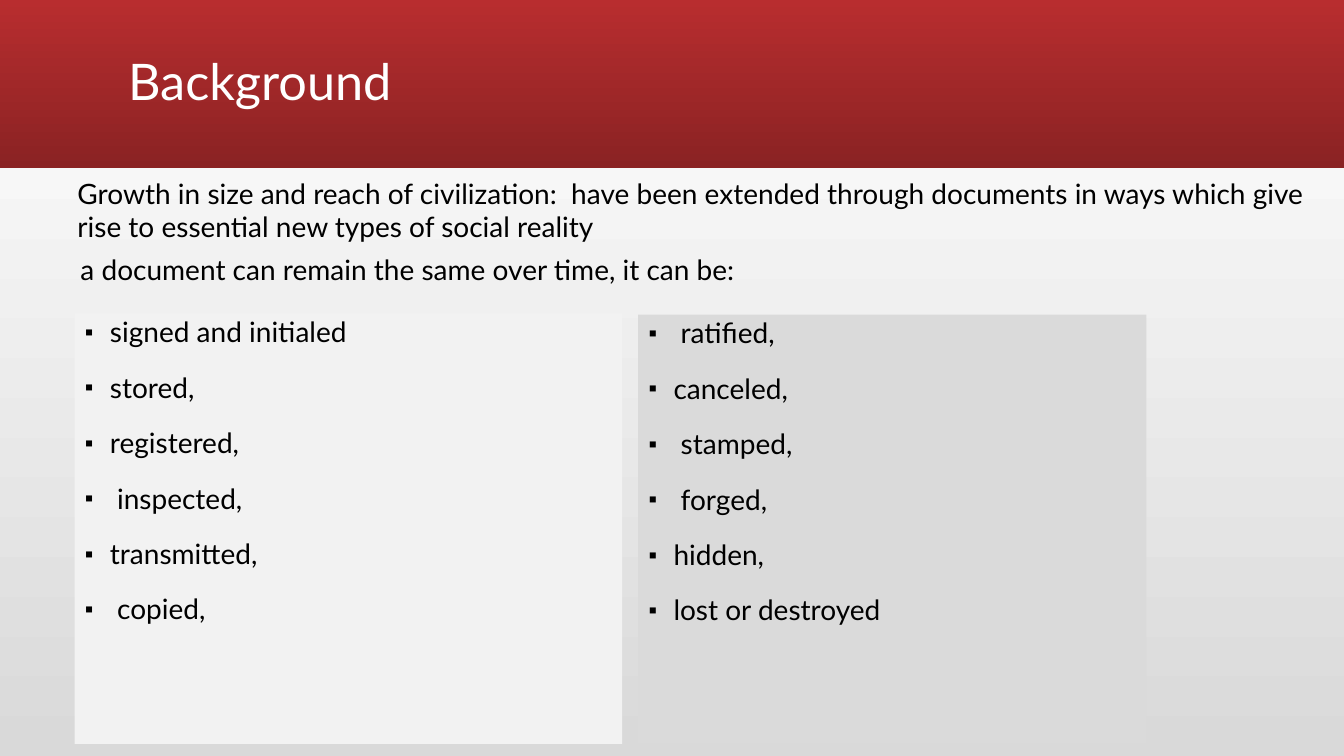
"""Builds the Background slide about what documents can undergo."""
import dataclasses

import lxml.etree
import pptx
import pptx.dml.color
import pptx.enum.shapes
import pptx.enum.text
import pptx.oxml.ns
import pptx.util

Inches = pptx.util.Inches
Pt = pptx.util.Pt


@dataclasses.dataclass(frozen=True)
class Theme:
    """Colours, font and type sizes of the slide."""
    font: str = "Lato"
    title_size: int = 36
    text_size: int = 20
    title: str = "FFFFFF"
    text: str = "000000"
    page: tuple = ("D9D9D9", "FFFFFF")
    band: tuple = ("B82D2F", "8A2223")
    left_panel: str = "F2F2F2"
    right_panel: str = "DADADA"


THEME = Theme()

INTRO = ("Growth in size and reach of civilization:  have been extended through "
         "documents in ways which give rise to essential new types of social reality")
LEAD = "a document can remain the same over time, it can be:"
LEFT_ITEMS = ["signed and initialed", "stored,", "registered,", " inspected,",
              "transmitted,", " copied,"]
RIGHT_ITEMS = [" ratified,", "canceled,", " stamped,", " forged,", "hidden,",
               "lost or destroyed"]


def color(value):
    """Turn a hex string into a colour."""
    return pptx.dml.color.RGBColor.from_string(value)


def fill_gradient(fill, colors, angle):
    """Fill with a two-stop gradient, its angle counted anticlockwise."""
    fill.gradient()
    fill.gradient_angle = angle
    for stop, value in zip(fill.gradient_stops, colors):
        stop.color.rgb = color(value)


def place(shape, box):
    """Move a shape to a box of left, top, width and height in inches."""
    shape.left, shape.top, shape.width, shape.height = map(Inches, box)


def style(para, size, value):
    """Set the font of a whole paragraph."""
    para.font.name = THEME.font
    para.font.size = Pt(size)
    para.font.color.rgb = color(value)


def add_header(page, box, text):
    """Draw the header band with the title placeholder inside it."""
    left, top, width, height = box
    band = page.shapes.add_shape(pptx.enum.shapes.MSO_SHAPE.RECTANGLE, *map(Inches, box))
    band.shadow.inherit = False
    band.line.fill.background()
    fill_gradient(band.fill, THEME.band, 270)
    title = page.shapes.title
    title._element.addprevious(band._element)
    place(title, (left + 1.17, top + 0.11, 11, height - 0.22))
    frame = title.text_frame
    frame.text = text
    frame.auto_size = pptx.enum.text.MSO_AUTO_SIZE.NONE
    frame.vertical_anchor = pptx.enum.text.MSO_ANCHOR.MIDDLE
    para = frame.paragraphs[0]
    para.alignment = pptx.enum.text.PP_ALIGN.LEFT
    para.line_spacing = 0.9
    style(para, THEME.title_size, THEME.title)


def add_statement(page, box, text):
    """Place a wrapped line of running text."""
    frame = page.shapes.add_textbox(*map(Inches, box)).text_frame
    frame.word_wrap = True
    frame.auto_size = pptx.enum.text.MSO_AUTO_SIZE.SHAPE_TO_FIT_TEXT
    frame.text = text
    style(frame.paragraphs[0], THEME.text_size, THEME.text)


def add_bullet(para):
    """Give a paragraph a small square bullet and a hanging indent."""
    properties = para._p.get_or_add_pPr()
    properties.set("marL", str(Inches(0.25)))
    properties.set("indent", str(-Inches(0.25)))
    for tag, name, value in (("a:buSzPct", "val", "80000"),
                             ("a:buFont", "typeface", THEME.font),
                             ("a:buChar", "char", "▪")):
        lxml.etree.SubElement(properties, pptx.oxml.ns.qn(tag)).set(name, value)


def fill_panel(panel, box, items, background):
    """Turn a body placeholder into a filled panel with a bulleted list."""
    place(panel, box)
    panel.fill.solid()
    panel.fill.fore_color.rgb = color(background)
    frame = panel.text_frame
    frame.text = "\n".join(items)
    frame.auto_size = pptx.enum.text.MSO_AUTO_SIZE.NONE
    frame.vertical_anchor = pptx.enum.text.MSO_ANCHOR.TOP
    frame._txBody.bodyPr.set("numCol", "2")
    for para in frame.paragraphs:
        para.line_spacing = 0.9
        para.space_before = Pt(18)
        add_bullet(para)
        style(para, THEME.text_size, THEME.text)


def main():
    """Build the deck and save it."""
    deck = pptx.Presentation()
    deck.slide_width, deck.slide_height = Inches(13.33), Inches(7.5)
    page = deck.slides.add_slide(deck.slide_layouts.get_by_name("Two Content"))
    fill_gradient(page.background.fill, THEME.page, 90)
    add_header(page, (0, 0, 13.33, 1.67), "Background")
    fill_panel(page.placeholders[1], (0.74, 3.11, 5.43, 4.27), LEFT_ITEMS, THEME.left_panel)
    fill_panel(page.placeholders[2], (6.33, 3.12, 5.04, 4.25), RIGHT_ITEMS, THEME.right_panel)
    add_statement(page, (0.67, 1.7, 12.44, 0.77), INTRO)
    add_statement(page, (0.7, 2.46, 11.2, 0.44), LEAD)
    deck.save("out.pptx")


if __name__ == "__main__":
    main()
